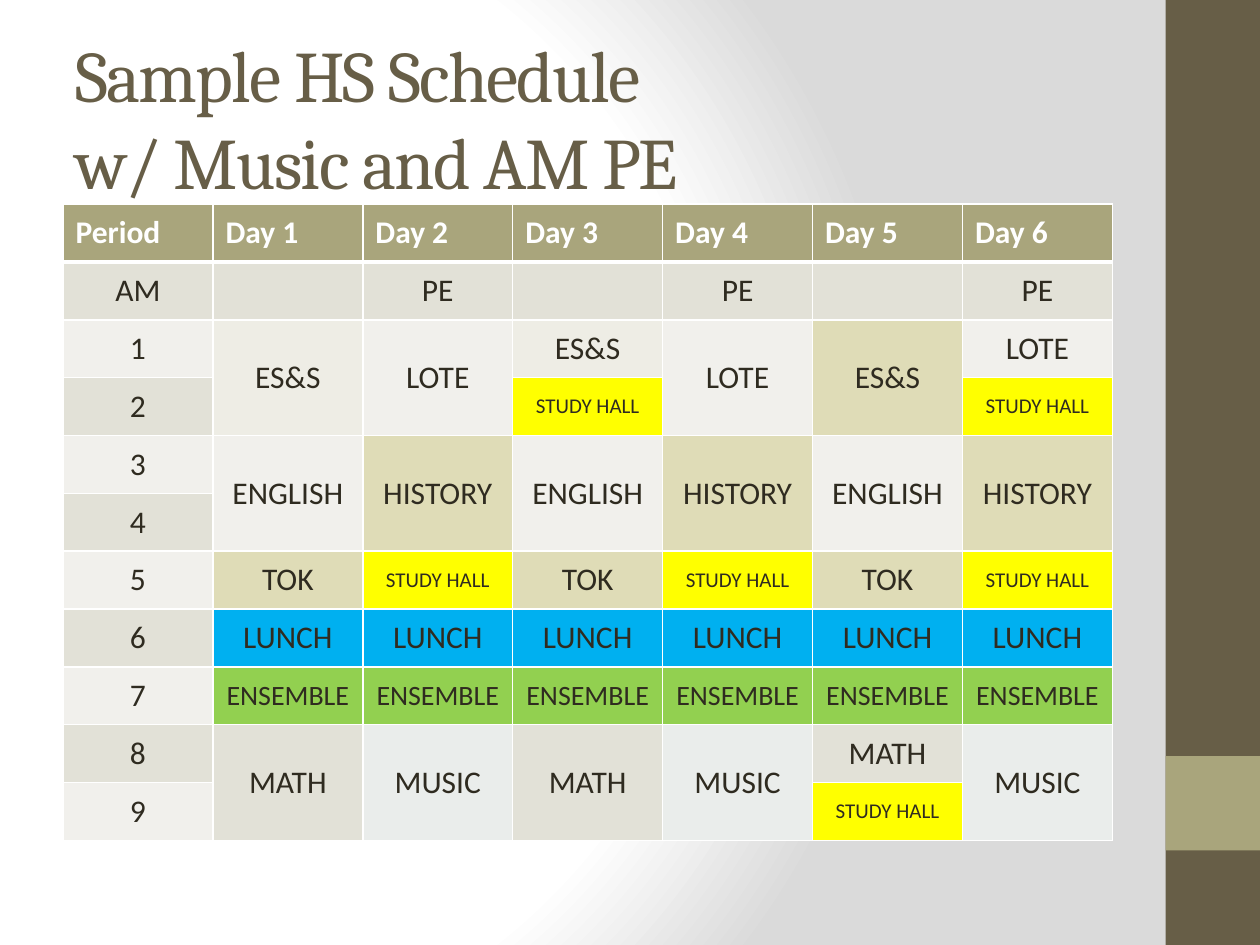
from dataclasses import dataclass

from pptx import Presentation
from pptx.dml.color import RGBColor
from pptx.enum.shapes import MSO_SHAPE
from pptx.enum.text import MSO_ANCHOR, PP_ALIGN
from pptx.oxml import parse_xml
from pptx.oxml.ns import nsdecls
from pptx.slide import Slide
from pptx.table import Table, _Cell
from pptx.util import Inches, Pt

COLORS = {
    "white": "FFFFFF", "edge": "DADADA", "brown": "675E47", "olive": "A9A57C",
    "ink": "2F2B20", "dark band": "E2E1D7", "light band": "F1F0EC",
    "cream": "EEEDE5", "sand": "DFDCB7", "mist": "EAEDEB",
    "yellow": "FFFF00", "blue": "00B0F0", "green": "92D050",
}
SLIDE_W, SLIDE_H = Inches(10), Inches(7.5)
LEFT, CONTENT_W = 0.05, 0.833
PERIODS = ["AM", *map(str, range(1, 10))]
DAYS = range(1, 7)
ODD_DAYS, EVEN_DAYS = (1, 3, 5), (2, 4, 6)


@dataclass(frozen=True)
class Panel:
    """A sidebar block; top and height are shares of the slide height."""
    top: float
    height: float
    color: str


@dataclass(frozen=True)
class Lesson:
    """A subject on some days, from a table row down over one or more periods."""
    subject: str
    days: tuple[int, ...]
    row: int
    periods: int
    color: str
    size: int = 18


PANELS = [Panel(0, 1, "brown"), Panel(0.8, 0.1, "olive")]
LESSONS = [
    Lesson("", ODD_DAYS, 1, 1, "dark band"),
    Lesson("PE", EVEN_DAYS, 1, 1, "dark band"),
    Lesson("ES&S", (1,), 2, 2, "cream"),
    Lesson("ES&S", (3,), 2, 1, "cream"),
    Lesson("ES&S", (5,), 2, 2, "sand"),
    Lesson("LOTE", (2, 4), 2, 2, "light band"),
    Lesson("LOTE", (6,), 2, 1, "light band"),
    Lesson("STUDY HALL", (3, 6), 3, 1, "yellow", 12),
    Lesson("ENGLISH", ODD_DAYS, 4, 2, "light band"),
    Lesson("HISTORY", EVEN_DAYS, 4, 2, "sand"),
    Lesson("TOK", ODD_DAYS, 6, 1, "sand"),
    Lesson("STUDY HALL", EVEN_DAYS, 6, 1, "yellow", 12),
    Lesson("LUNCH", tuple(DAYS), 7, 1, "blue"),
    Lesson("ENSEMBLE", tuple(DAYS), 8, 1, "green", 16),
    Lesson("MATH", (1, 3), 9, 2, "dark band"),
    Lesson("MATH", (5,), 9, 1, "dark band"),
    Lesson("MUSIC", EVEN_DAYS, 9, 2, "mist"),
    Lesson("STUDY HALL", (5,), 10, 1, "yellow", 12),
]


def rgb(color: str) -> RGBColor:
    return RGBColor.from_string(COLORS[color])


def set_background(slide: Slide) -> None:
    stops = "".join(
        f'<a:gs pos="{share * 1000}"><a:srgbClr val="{COLORS[color]}"/></a:gs>'
        for share, color in ((0, "white"), (75, "white"), (100, "edge"))
    )
    slide.element.cSld.insert(0, parse_xml(
        f'<p:bg {nsdecls("p", "a")}><p:bgPr><a:gradFill rotWithShape="1">'
        f'<a:gsLst>{stops}</a:gsLst><a:path path="circle">'
        '<a:fillToRect l="20000" t="50000" r="100000" b="50000"/></a:path>'
        '</a:gradFill><a:effectLst/></p:bgPr></p:bg>'
    ))


def draw_panel(slide: Slide, panel: Panel) -> None:
    width = int(SLIDE_W * 0.075)
    block = slide.shapes.add_shape(
        MSO_SHAPE.RECTANGLE, SLIDE_W - width, int(SLIDE_H * panel.top),
        width, int(SLIDE_H * panel.height))
    block.shadow.inherit = False
    block.fill.solid()
    block.fill.fore_color.rgb = rgb(panel.color)
    block.line.fill.background()


def draw_title(slide: Slide, title: str) -> None:
    frame = slide.shapes.add_textbox(
        int(SLIDE_W * LEFT), int(SLIDE_H * 0.04),
        int(SLIDE_W * CONTENT_W), Inches(1.25)).text_frame
    frame.word_wrap = True
    frame.vertical_anchor = MSO_ANCHOR.MIDDLE
    heading = frame.paragraphs[0]
    heading.text = title
    heading.font.name = "Cambria"
    heading.font.size = Pt(41.4)
    heading.font.color.rgb = rgb("brown")
    for run in heading.runs:
        run.font._element.set("spc", "-100")


def set_borders(cell: _Cell, bottom: int) -> None:
    for index, (side, width) in enumerate(
            {"L": 1, "R": 1, "T": 1, "B": bottom}.items()):
        cell._tc.get_or_add_tcPr().insert(index, parse_xml(
            f'<a:ln{side} {nsdecls("a")} w="{Pt(width)}"><a:solidFill>'
            f'<a:srgbClr val="{COLORS["white"]}"/></a:solidFill></a:ln{side}>'
        ))


def fill_cell(cell: _Cell, label: str, color: str, size: int = 18,
              header: bool = False) -> None:
    cell.fill.solid()
    cell.fill.fore_color.rgb = rgb(color)
    cell.vertical_anchor = MSO_ANCHOR.MIDDLE
    cell.text = label
    entry = cell.text_frame.paragraphs[0]
    entry.alignment = PP_ALIGN.LEFT if header else PP_ALIGN.CENTER
    entry.font.name = "Calibri"
    entry.font.size = Pt(size)
    entry.font.bold = header
    entry.font.color.rgb = rgb("white" if header else "ink")


def place_lesson(schedule: Table, lesson: Lesson) -> None:
    for day in lesson.days:
        cell = schedule.cell(lesson.row, day)
        if lesson.periods > 1:
            cell.merge(schedule.cell(lesson.row + lesson.periods - 1, day))
        fill_cell(cell, lesson.subject, lesson.color, lesson.size)


def draw_schedule(slide: Slide) -> None:
    headings = ["Period", *(f"Day {day}" for day in DAYS)]
    schedule = slide.shapes.add_table(
        len(PERIODS) + 1, len(headings), int(SLIDE_W * LEFT), Inches(1.62),
        int(SLIDE_W * CONTENT_W), Inches(5.05)).table
    for column, heading in enumerate(headings):
        fill_cell(schedule.cell(0, column), heading, "olive", header=True)
    for row, period in enumerate(PERIODS, start=1):
        band = "dark band" if row % 2 else "light band"
        fill_cell(schedule.cell(row, 0), period, band)
    for lesson in LESSONS:
        place_lesson(schedule, lesson)
    for row in range(len(PERIODS) + 1):
        for column in range(len(headings)):
            set_borders(schedule.cell(row, column), bottom=1 if row else 3)


def main() -> None:
    deck = Presentation()
    deck.slide_width, deck.slide_height = SLIDE_W, SLIDE_H
    slide = deck.slides.add_slide(deck.slide_layouts[6])
    set_background(slide)
    for panel in PANELS:
        draw_panel(slide, panel)
    draw_schedule(slide)
    draw_title(slide, "Sample HS Schedule \vw/ Music and AM PE")
    deck.save("out.pptx")


if __name__ == "__main__":
    main()
